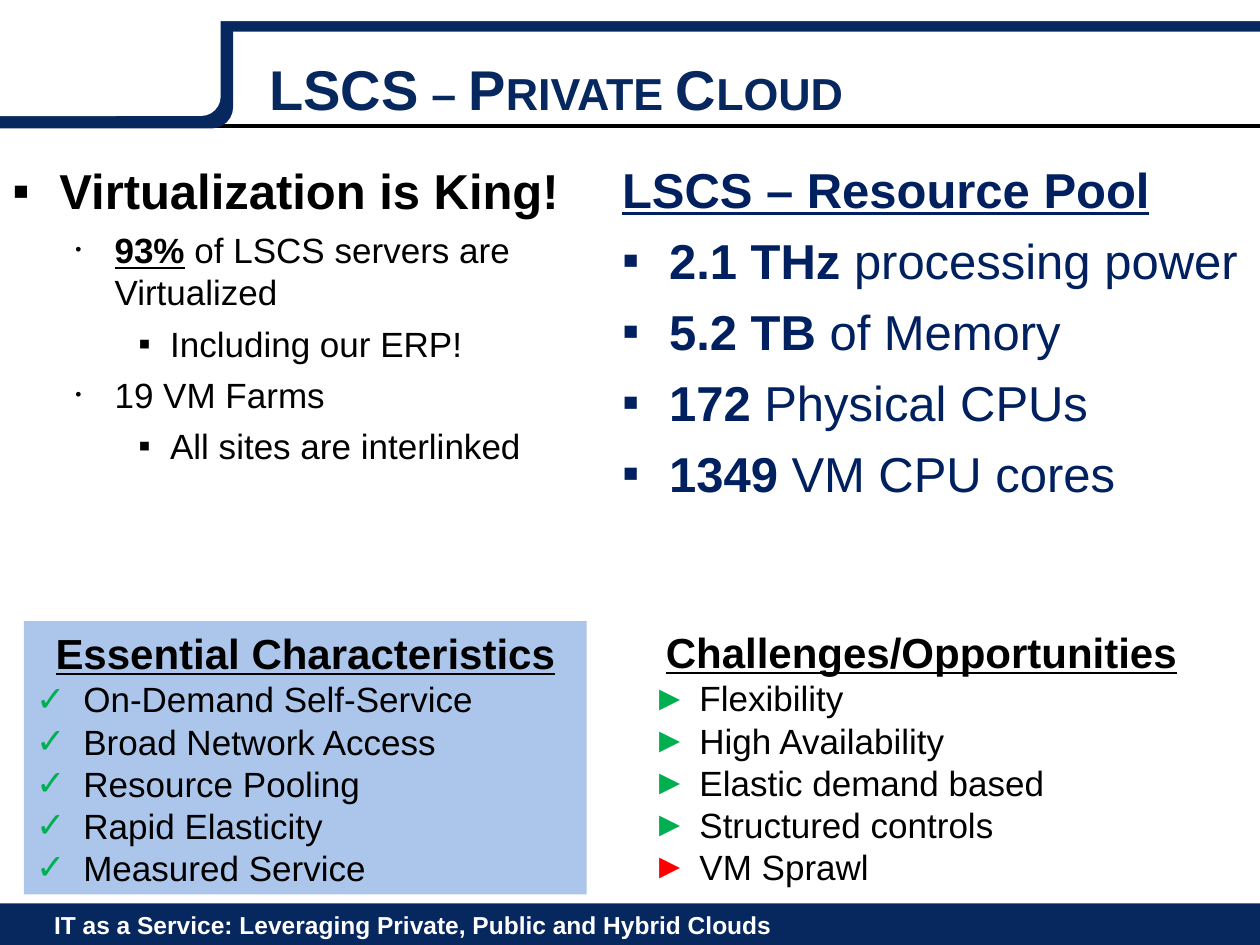
"""Build the LSCS private cloud slide."""
from lxml import etree
from pptx import Presentation
from pptx import util as u
from pptx.dml.color import RGBColor
from pptx.enum import shapes, text
from pptx.oxml.ns import qn

NAVY = RGBColor(0x07, 0x27, 0x5F)
INK = RGBColor(0x00, 0x20, 0x60)
PALE = RGBColor(0xAB, 0xC5, 0xEB)
GREEN = RGBColor(0x00, 0xB0, 0x50)
RED = RGBColor(0xFF, 0x00, 0x00)
BLACK = RGBColor(0x00, 0x00, 0x00)
WHITE = RGBColor(0xFF, 0xFF, 0xFF)

RECT = shapes.MSO_SHAPE.RECTANGLE
ROUND = shapes.MSO_SHAPE.ROUNDED_RECTANGLE
TOP = text.MSO_ANCHOR.TOP
MIDDLE = text.MSO_ANCHOR.MIDDLE
LEFT = text.PP_ALIGN.LEFT
CENTER = text.PP_ALIGN.CENTER

INDENTS = [(0.95, 0.95), (2.06, 0.79), (3.18, 0.64)]


def add_run(p, content, size=20, color=BLACK, bold=False, underline=False,
            small_caps=False, font="Arial"):
    r = p.add_run()
    r.text = content
    r.font.name = font
    r.font.size = u.Pt(size)
    r.font.color.rgb = color
    r.font.bold = bold
    r.font.underline = underline
    if small_caps:
        r._r.get_or_add_rPr().set("cap", "small")


class SlideBuilder:
    def __init__(self, slide):
        self.s = slide

    def shape(self, kind, x, y, w, h, fill):
        sp = self.s.shapes.add_shape(kind, u.Cm(x), u.Cm(y), u.Cm(w), u.Cm(h))
        sp.shadow.inherit = False
        sp.fill.solid()
        sp.fill.fore_color.rgb = fill
        sp.line.fill.background()
        return sp

    def line(self, x1, y1, x2, y2, color, width):
        cxn = self.s.shapes.add_connector(
            shapes.MSO_CONNECTOR.STRAIGHT, u.Cm(x1), u.Cm(y1), u.Cm(x2), u.Cm(y2))
        cxn.line.color.rgb = color
        cxn.line.width = u.Pt(width)
        etree.SubElement(cxn._element.spPr, qn("a:effectLst"))

    def text_box(self, x, y, w, h, anchor=TOP, top=0.13):
        sp = self.s.shapes.add_textbox(u.Cm(x), u.Cm(y), u.Cm(w), u.Cm(h))
        return self.frame(sp, anchor, top)

    def frame(self, sp, anchor, top=0.13):
        tf = sp.text_frame
        tf.word_wrap = True
        tf.vertical_anchor = anchor
        tf.margin_top = u.Cm(top)
        return tf

    def paragraph(self, tf, *runs, align=LEFT, before=0, level=0, bullet=None,
                  bullet_color=None, bullet_size=None):
        p = tf.paragraphs[0]
        if p.runs:
            p = tf.add_paragraph()
        p.alignment = align
        p.level = level
        p.space_before = u.Pt(before)
        if bullet:
            self.bullet(p, level, bullet, bullet_color, bullet_size)
        for content, fmt in runs:
            add_run(p, content, **fmt)

    def bullet(self, p, level, char, color, size):
        pPr = p._p.get_or_add_pPr()
        left, hang = INDENTS[level]
        pPr.set("marL", str(u.Cm(left)))
        pPr.set("indent", str(-u.Cm(hang)))
        if color is not None:
            clr = etree.SubElement(pPr, qn("a:buClr"))
            etree.SubElement(clr, qn("a:srgbClr")).set("val", str(color))
        if size:
            etree.SubElement(pPr, qn("a:buSzPct")).set("val", str(size * 1000))
        etree.SubElement(pPr, qn("a:buFont")).set("typeface", "Arial")
        etree.SubElement(pPr, qn("a:buChar")).set("char", char)

    def panel(self, x, y, fill, heading, char, items):
        tf = self.frame(self.shape(RECT, x, y, 11.35, 5.51, fill), MIDDLE)
        self.paragraph(tf, (heading, dict(size=24, bold=True, underline=True)),
                       align=CENTER)
        for item, color in items:
            self.paragraph(tf, (item, {}), bullet=char, bullet_color=color)


def draw_frame(b):
    b.shape(RECT, -0.41, 18.21, 25.81, 0.84, NAVY)
    b.shape(RECT, 4.7, 0, 20.7, 0.64, NAVY)
    b.line(0, 2.54, 25.4, 2.54, BLACK, 2.25)
    tf = b.text_box(0.84, 18.21, 23.7, 0.86, MIDDLE)
    b.paragraph(tf, ("IT as a Service: Leveraging Private, Public and Hybrid Clouds",
                     dict(size=14, color=WHITE, bold=True)))
    b.shape(ROUND, -0.43, 0, 5.13, 2.59, NAVY)
    b.shape(ROUND, -0.43, -0.05, 4.88, 2.39, WHITE)
    b.shape(RECT, 4.01, -0.05, 21.39, 0.36, WHITE)
    b.shape(RECT, 4.01, 0, 21.39, 0.43, WHITE)


def draw_virtualization(b):
    tf = b.text_box(0, 3, 12.29, 8.26, top=0.24)
    b.paragraph(tf, ("Virtualization is King!", dict(size=28, bold=True)), bullet="▪")
    dot = dict(level=1, bullet="•", bullet_size=50, before=5.3)
    square = dict(level=2, bullet="▪", before=5.3)
    b.paragraph(tf, ("93%", dict(bold=True, underline=True)),
                (" of LSCS servers are Virtualized", {}), **dot)
    b.paragraph(tf, ("Including our ERP!", {}), **square)
    b.paragraph(tf, ("19 VM Farms", {}), **dot)
    b.paragraph(tf, ("All sites are interlinked", {}), **square)


def draw_resource_pool(b):
    tf = b.text_box(12.29, 2.97, 13.31, 8.26, top=0.24)
    plain = dict(size=28, color=INK)
    strong = dict(plain, bold=True)
    b.paragraph(tf, ("LSCS – Resource Pool", dict(strong, underline=True)))
    for amount, unit in [("2.1 THz", " processing power"), ("5.2 TB", " of Memory"),
                         ("172", " Physical CPUs"), ("1349", " VM CPU cores")]:
        b.paragraph(tf, (amount, strong), (unit, plain), bullet="▪", before=7)


def main():
    prs = Presentation()
    prs.slide_width, prs.slide_height = u.Cm(25.4), u.Cm(19.05)
    b = SlideBuilder(prs.slides.add_slide(prs.slide_layouts[6]))
    draw_frame(b)
    draw_virtualization(b)
    title = b.text_box(5.18, 0.84, 19.05, 1.47, top=0.25)
    b.paragraph(title, ("LSCS – Private Cloud",
                        dict(size=32, color=NAVY, bold=True, small_caps=True)))
    traits = ["On-Demand Self-Service", "Broad Network Access", "Resource Pooling",
              "Rapid Elasticity", "Measured Service"]
    b.panel(0.48, 12.52, PALE, "Essential Characteristics", "✓",
            [(trait, GREEN) for trait in traits])
    gains = ["Flexibility", "High Availability", "Elastic demand based",
             "Structured controls"]
    b.panel(12.9, 12.5, WHITE, "Challenges/Opportunities", "►",
            [(gain, GREEN) for gain in gains] + [("VM Sprawl", RED)])
    draw_resource_pool(b)
    prs.save("out.pptx")


if __name__ == "__main__":
    main()
